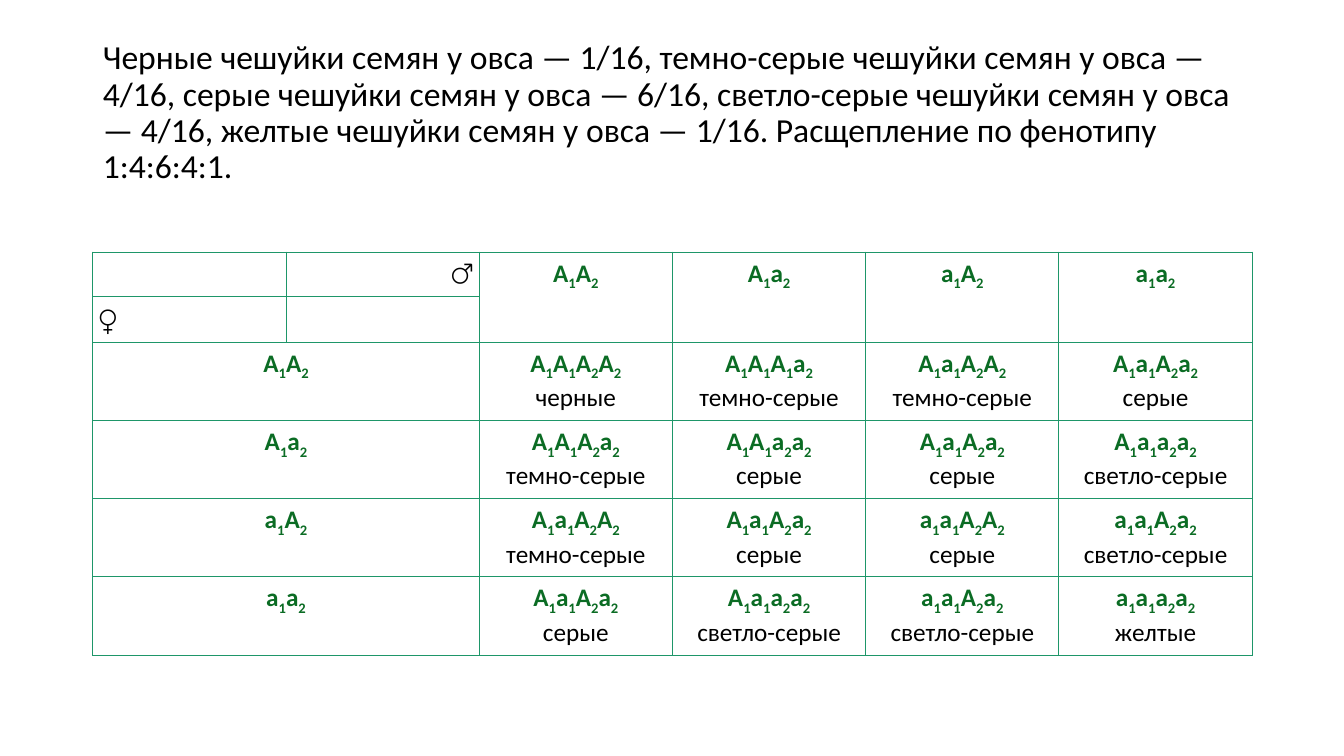
from pptx import Presentation
from pptx.dml.color import RGBColor
from pptx.enum.text import MSO_ANCHOR as Anchor, MSO_AUTO_SIZE as AutoSize, PP_ALIGN as Align
from pptx.oxml import parse_xml
from pptx.oxml.ns import nsdecls
from pptx.util import Inches, Pt

BLACK = RGBColor(0x00, 0x00, 0x00)
GENE_GREEN = RGBColor(0x0B, 0x6C, 0x24)
BORDER_GREEN = RGBColor(0x1E, 0x96, 0x69)

TITLE = (
    "Черные чешуйки семян у овса — 1/16, темно-серые чешуйки семян у овса — 4/16, "
    "серые чешуйки семян у овса — 6/16, светло-серые чешуйки семян у овса — 4/16, "
    "желтые чешуйки семян у овса — 1/16. Расщепление по фенотипу 1:4:6:4:1."
)
GAMETES = ["A1A2", "A1a2", "a1A2", "a1a2"]
OFFSPRING = [
    ["A1A1A2A2", "A1A1A1a2", "A1a1A2A2", "A1a1A2a2"],
    ["A1A1A2a2", "A1A1a2a2", "A1a1A2a2", "A1a1а2a2"],
    ["A1a1A2A2", "A1a1A2a2", "a1a1A2A2", "a1a1A2a2"],
    ["A1a1A2a2", "A1a1a2a2", "a1a1A2a2", "a1a1a2a2"],
]
COLOUR_BY_DOMINANT_COUNT = ["желтые", "светло-серые", "серые", "темно-серые", "черные"]
ROW_HEIGHTS = [0.44, 0.45] + [0.775] * len(GAMETES)
COLUMN_COUNT = 6


class SlideBuilder:
    font_name = "Calibri"
    left, width = Inches(0.92), Inches(11.5)
    cell_margin = Inches(0.06)
    border_width = Pt(0.75)

    def __init__(self, presentation):
        self.slide = presentation.slides.add_slide(presentation.slide_layouts[5])

    def apply(self, target, values):
        for name, value in values.items():
            setattr(target, name, value)

    def add_run(self, paragraph, text, size=18, color=BLACK, bold=False):
        run = paragraph.add_run()
        run.text = text
        self.apply(run.font, {"name": self.font_name, "size": Pt(size), "bold": bold})
        run.font.color.rgb = color
        return run

    def add_title(self, text):
        title = self.slide.shapes.title
        self.apply(title, {"left": self.left, "top": Inches(0.4),
                           "width": self.width, "height": Inches(1.45)})
        self.apply(title.text_frame, {"word_wrap": True, "auto_size": AutoSize.NONE,
                                      "vertical_anchor": Anchor.MIDDLE})
        paragraph = title.text_frame.paragraphs[0]
        self.apply(paragraph, {"alignment": Align.LEFT, "line_spacing": 0.9})
        self.add_run(paragraph, text, size=24)

    def add_table(self, row_heights, column_count):
        frame = self.slide.shapes.add_table(
            len(row_heights), column_count, self.left, Inches(2.5),
            self.width, Inches(sum(row_heights)))
        table = frame.table
        self.apply(table, {"first_row": False, "horz_banding": False})
        for row, height in zip(table.rows, row_heights):
            row.height = Inches(height)
        for cell in table.iter_cells():
            self.style_cell(cell)
        return table

    def style_cell(self, cell):
        margins = ("margin_left", "margin_right", "margin_top", "margin_bottom")
        self.apply(cell, dict.fromkeys(margins, self.cell_margin))
        properties = cell._tc.get_or_add_tcPr()
        for side in "LRTB":
            properties.append(parse_xml(
                f'<a:ln{side} {nsdecls("a")} w="{self.border_width}">'
                f'<a:solidFill><a:srgbClr val="{BORDER_GREEN}"/></a:solidFill></a:ln{side}>'))
        cell.fill.background()

    def add_symbol(self, cell, symbol, alignment, anchor):
        cell.vertical_anchor = anchor
        paragraph = cell.text_frame.paragraphs[0]
        paragraph.alignment = alignment
        self.add_run(paragraph, symbol)

    def add_genotype(self, cell, genotype, phenotype=None):
        paragraph = cell.text_frame.paragraphs[0]
        paragraph.alignment = Align.CENTER
        for symbol in genotype:
            run = self.add_run(paragraph, symbol, color=GENE_GREEN, bold=True)
            if symbol.isdigit():
                run._r.get_or_add_rPr().set("baseline", "-25000")
        if phenotype:
            paragraph.add_line_break()
            self.add_run(paragraph, phenotype)

    def add_punnett_square(self):
        table = self.add_table(ROW_HEIGHTS, COLUMN_COUNT)
        self.add_symbol(table.cell(0, 1), "♂", Align.RIGHT, Anchor.TOP)
        self.add_symbol(table.cell(1, 0), "♀", Align.LEFT, Anchor.BOTTOM)
        for index, gamete in enumerate(GAMETES, start=2):
            male, female = table.cell(0, index), table.cell(index, 0)
            male.merge(table.cell(1, index))
            female.merge(table.cell(index, 1))
            self.add_genotype(male, gamete)
            self.add_genotype(female, gamete)
        for row, genotypes in enumerate(OFFSPRING, start=2):
            for column, genotype in enumerate(genotypes, start=2):
                dominant_count = sum(symbol.isupper() for symbol in genotype)
                self.add_genotype(table.cell(row, column), genotype,
                                  COLOUR_BY_DOMINANT_COUNT[dominant_count])


def main():
    presentation = Presentation()
    presentation.slide_width = Inches(13.33)
    presentation.slide_height = Inches(7.5)
    builder = SlideBuilder(presentation)
    builder.add_title(TITLE)
    builder.add_punnett_square()
    presentation.save("out.pptx")


if __name__ == "__main__":
    main()
